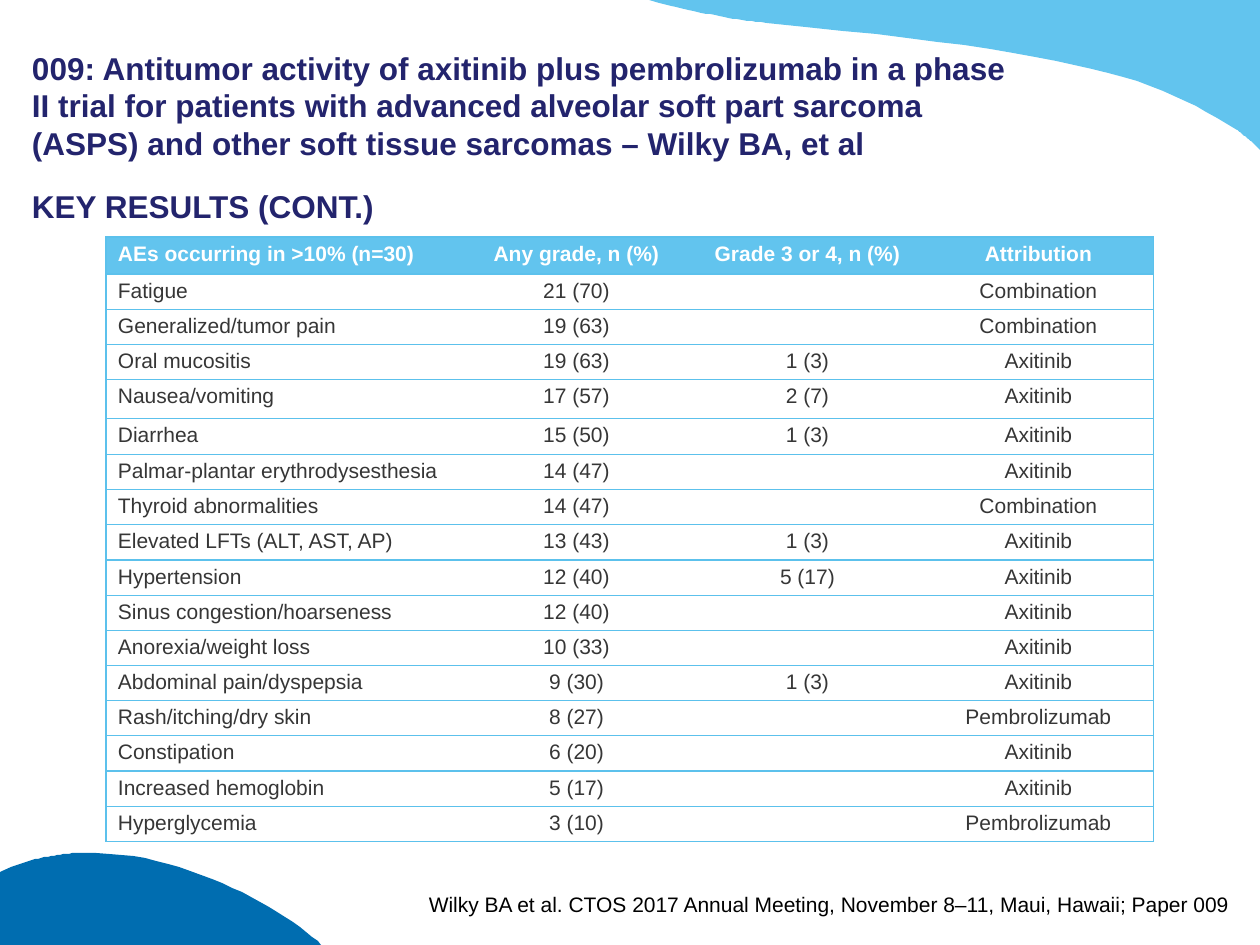
"""Build a slide listing adverse events in a four-column table."""
from lxml.etree import SubElement
from pptx import Presentation
from pptx.dml.color import RGBColor
from pptx.enum.text import MSO_ANCHOR, MSO_AUTO_SIZE, PP_ALIGN
from pptx.oxml import parse_xml
from pptx.oxml.ns import nsdecls, qn
from pptx.util import Pt

PX = 914400 // 126
NAVY, SKY, BLUE, RULE, GREY = "23246D", "62C4EE", "006DB0", "5CC1EC", "363636"
WHITE, BLACK = "FFFFFF", "000000"

TITLE = ("009: Antitumor activity of axitinib plus pembrolizumab in a phase II trial "
         "for patients with advanced alveolar soft part sarcoma (ASPS) and other soft "
         "tissue sarcomas – Wilky BA, et al")
HEADING = "KEY RESULTS (CONT.)"
CITATION = "Wilky BA et al. CTOS 2017 Annual Meeting, November 8–11, Maui, Hawaii; Paper 009"
ROWS = [
    ("AEs occurring in >10% (n=30)", "Any grade, n (%)", "Grade 3 or 4, n (%)", "Attribution"),
    ("Fatigue", "21 (70)", "", "Combination"),
    ("Generalized/tumor pain", "19 (63)", "", "Combination"),
    ("Oral mucositis", "19 (63)", "1 (3)", "Axitinib"),
    ("Nausea/vomiting", "17 (57)", "2 (7)", "Axitinib"),
    ("Diarrhea", "15 (50)", "1 (3)", "Axitinib"),
    ("Palmar-plantar erythrodysesthesia", "14 (47)", "", "Axitinib"),
    ("Thyroid abnormalities", "14 (47)", "", "Combination"),
    ("Elevated LFTs (ALT, AST, AP)", "13 (43)", "1 (3)", "Axitinib"),
    ("Hypertension", "12 (40)", "5 (17)", "Axitinib"),
    ("Sinus congestion/hoarseness", "12 (40)", "", "Axitinib"),
    ("Anorexia/weight loss", "10 (33)", "", "Axitinib"),
    ("Abdominal pain/dyspepsia", "9 (30)", "1 (3)", "Axitinib"),
    ("Rash/itching/dry skin", "8 (27)", "", "Pembrolizumab"),
    ("Constipation", "6 (20)", "", "Axitinib"),
    ("Increased hemoglobin", "5 (17)", "", "Axitinib"),
    ("Hyperglycemia", "3 (10)", "", "Pembrolizumab"),
]
COL_WIDTHS = [355, 231, 231, 231]
ROW_HEIGHT, TALL_ROWS = 35, {0: 37, 4: 39, 5: 36}

# Each segment is one point for a line or three points for a Bézier curve.
TOP_WAVE = [[(649, 0)], [(1260, 0)], [(1260, 150)], [(1251, 141)],
            [(1246, 137), (1242, 134), (1237, 130)],
            [(1155, 78), (1089, 54), (766, 23)],
            [(727, 19), (692, 11), (659, 3)]]
BOTTOM_WAVE = [[(84, 853)], [(183, 851), (275, 906), (318, 941)], [(321, 945)],
               [(0, 945)], [(0, 872)], [(11, 867)], [(35, 858), (60, 853), (84, 853)]]


def rgb(color):
    return RGBColor.from_string(color)


def outline(segments, steps=24):
    points = []
    for seg in segments:
        if len(seg) == 1:
            points += seg
            continue
        ctrl = [points[-1], *seg]
        for i in range(1, steps + 1):
            t = i / steps
            weights = ((1 - t) ** 3, 3 * t * (1 - t) ** 2, 3 * t * t * (1 - t), t ** 3)
            points.append(tuple(sum(w * c[k] for w, c in zip(weights, ctrl)) for k in (0, 1)))
    return points


def add_wave(s, segments, color):
    start, *rest = outline(segments)
    builder = s.shapes.build_freeform(*start, scale=PX)
    builder.add_line_segments(rest)
    sp = builder.convert_to_shape()
    sp.shadow.inherit = False
    sp.fill.solid()
    sp.fill.fore_color.rgb = rgb(color)
    sp.line.fill.background()
    s.shapes._spTree.insert(2, sp._element)


def place(sp, x, y, w, h):
    sp.left, sp.top, sp.width, sp.height = (v * PX for v in (x, y, w, h))


def set_insets(target, left, top, right, bottom):
    target.margin_left, target.margin_top = left * PX, top * PX
    target.margin_right, target.margin_bottom = right * PX, bottom * PX


def write(tf, text, size, color, bold=False, align=PP_ALIGN.LEFT):
    p = tf.paragraphs[0]
    p.alignment = align
    p.space_before = Pt(0)
    if text:
        r = p.add_run()
        r.text = text
        r.font.name, r.font.size, r.font.bold = "Arial", Pt(size), bold
        r.font.color.rgb = rgb(color)
    else:
        SubElement(p._p, qn("a:endParaRPr")).set("sz", str(size * 100))
    return p


def set_borders(cell, visible):
    tc_pr = cell._tc.get_or_add_tcPr()
    for i, side in enumerate("LRTB"):
        paint = (f'<a:solidFill><a:srgbClr val="{RULE}"/></a:solidFill>'
                 if side in visible else "<a:noFill/>")
        tc_pr.insert(i, parse_xml(f'<a:ln{side} {nsdecls("a")} w="9525">{paint}</a:ln{side}>'))


def add_events_table(s):
    heights = [TALL_ROWS.get(i, ROW_HEIGHT) for i in range(len(ROWS))]
    frame = s.shapes.add_table(len(ROWS), len(COL_WIDTHS), 106 * PX, 237 * PX,
                               sum(COL_WIDTHS) * PX, sum(heights) * PX)
    table = frame.table
    table.horz_banding = False
    for col, width in zip(table.columns, COL_WIDTHS):
        col.width = width * PX
    for i, values in enumerate(ROWS):
        table.rows[i].height = heights[i] * PX
        header = i == 0
        for j, text in enumerate(values):
            cell = table.cell(i, j)
            set_insets(cell, 12, 5, 12, 5)
            cell.fill.solid()
            cell.fill.fore_color.rgb = rgb(SKY if header else WHITE)
            write(cell.text_frame, text, 12, WHITE if header else GREY, header,
                  PP_ALIGN.CENTER if j else PP_ALIGN.LEFT)
            set_borders(cell, "TB" + {0: "L", len(values) - 1: "R"}.get(j, ""))


def main():
    prs = Presentation()
    prs.slide_width, prs.slide_height = 1260 * PX, 945 * PX
    s = prs.slides.add_slide(prs.slide_layouts[1])
    add_wave(s, BOTTOM_WAVE, BLUE)
    add_wave(s, TOP_WAVE, SKY)

    title, body = s.placeholders
    place(title, 32, 32, 983, 130)
    place(body, 32, 181, 1197, 732)
    for sp, text, bottom, anchor in ((title, TITLE, 0, MSO_ANCHOR.BOTTOM),
                                     (body, HEADING, 6, MSO_ANCHOR.TOP)):
        tf = sp.text_frame
        set_insets(tf, 0, 6, 0, bottom)
        tf.auto_size = MSO_AUTO_SIZE.NONE
        tf.vertical_anchor = anchor
        p = write(tf, text, 18, NAVY, True)
    p.space_after = Pt(4)
    p_pr = p._p.get_or_add_pPr()
    p_pr.set("marL", "0")
    p_pr.set("indent", "0")
    SubElement(p_pr, qn("a:buNone"))

    citation = s.shapes.add_textbox(422 * PX, 892 * PX, 808 * PX, 25 * PX)
    tf = citation.text_frame
    set_insets(tf, 0, 0, 0, 0)
    tf.word_wrap = False
    tf.auto_size = MSO_AUTO_SIZE.SHAPE_TO_FIT_TEXT
    tf.vertical_anchor = MSO_ANCHOR.BOTTOM
    write(tf, CITATION, 12, BLACK, align=PP_ALIGN.RIGHT)

    add_events_table(s)
    prs.save("out.pptx")


if __name__ == "__main__":
    main()
